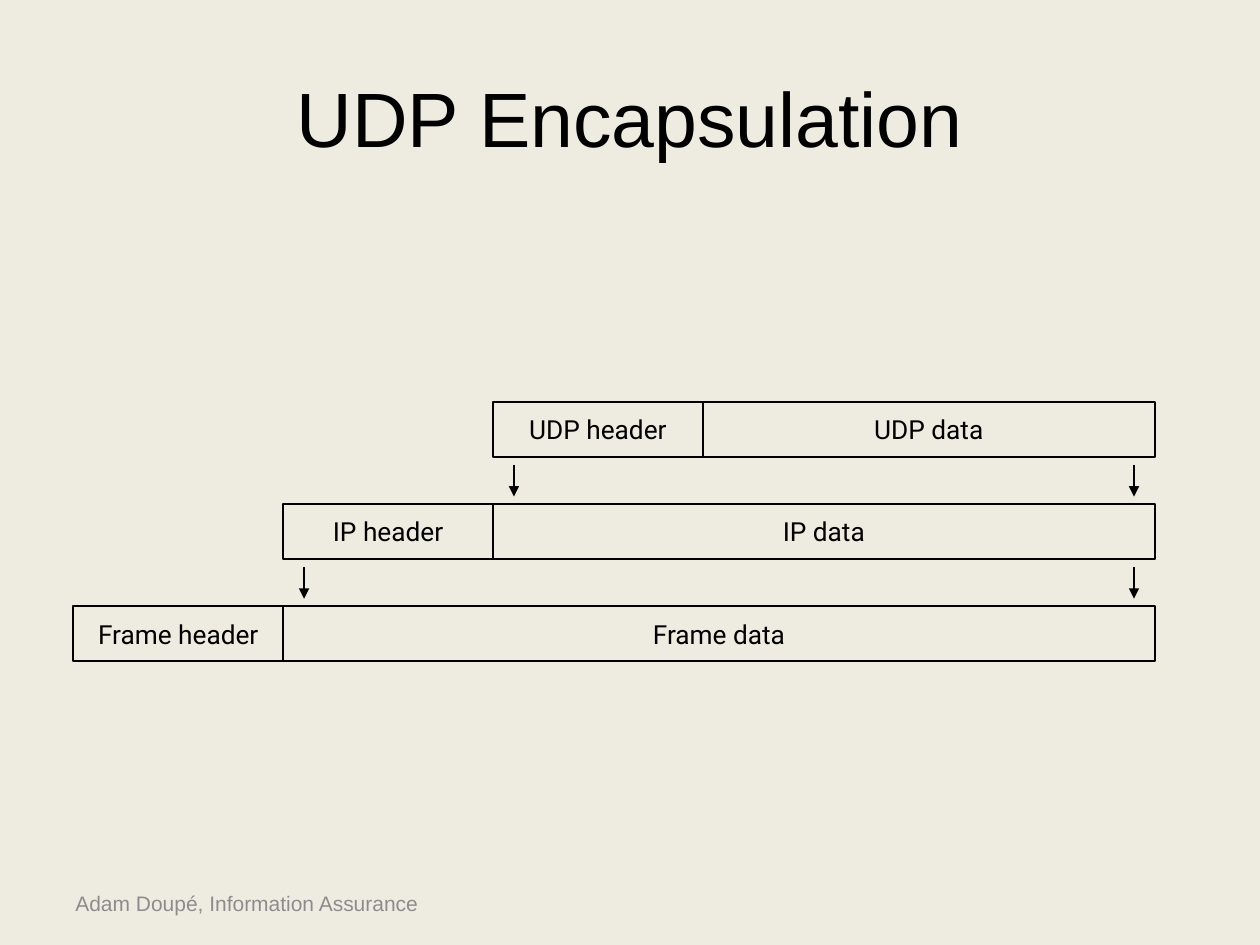
import pptx
import pptx.util
import pptx.dml.color
import pptx.enum.shapes
import pptx.enum.text
import pptx.oxml.ns
from lxml import etree

Cm = pptx.util.Cm
Pt = pptx.util.Pt
ALIGN = pptx.enum.text.PP_ALIGN

TITLE = "UDP Encapsulation"
FOOTER = "Adam Doupé, Information Assurance"
LAYERS = [  # innermost packet first
    ("UDP header", "UDP data"),
    ("IP header", "IP data"),
    ("Frame header", "Frame data"),
]
COLORS = {"background": "EEECE1", "ink": "000000", "footer": "8C8C8C"}

# Layout in centimetres
LEFT, RIGHT, TOP = 1.48, 23.28, 8.1
HEADER_WIDTH, ROW_HEIGHT, ROW_STEP = 4.23, 1.11, 2.06
ARROW_INSET, ARROW_GAP, ARROW_LENGTH = 0.42, 0.16, 0.64


def rgb(name):
    return pptx.dml.color.RGBColor.from_string(COLORS[name])


def write(shape, text, size, font, color, align):
    frame = shape.text_frame
    frame.vertical_anchor = pptx.enum.text.MSO_ANCHOR.MIDDLE
    para = frame.paragraphs[0]
    para.text = text
    para.alignment = align
    para.font.size = Pt(size)
    para.font.name = font
    para.font.color.rgb = rgb(color)


def add_text(page, text, left, top, width, height, size, color, align):
    box = page.shapes.add_textbox(Cm(left), Cm(top), Cm(width), Cm(height))
    box.text_frame.word_wrap = True
    write(box, text, size, "Arial", color, align)


def add_field(page, text, left, top, width):
    field = page.shapes.add_shape(
        pptx.enum.shapes.MSO_SHAPE.RECTANGLE,
        Cm(left), Cm(top), Cm(width), Cm(ROW_HEIGHT))
    field.shadow.inherit = False
    field.fill.background()
    field.line.color.rgb = rgb("ink")
    field.line.width = Pt(1)
    frame = field.text_frame
    frame.word_wrap = False
    frame.margin_left = frame.margin_right = Cm(0.23)
    frame.margin_top = frame.margin_bottom = Cm(0.1)
    write(field, text, 15, "Roboto", "ink", ALIGN.CENTER)


def add_down_arrow(page, x, top):
    arrow = page.shapes.add_connector(
        pptx.enum.shapes.MSO_CONNECTOR.STRAIGHT,
        Cm(x), Cm(top), Cm(x), Cm(top + ARROW_LENGTH))
    arrow.line.color.rgb = rgb("ink")
    arrow.line.width = Pt(1)
    qn = pptx.oxml.ns.qn
    etree.SubElement(arrow.line._get_or_add_ln(), qn("a:tailEnd"), type="triangle")
    etree.SubElement(arrow._element.spPr, qn("a:effectLst"))


def main():
    deck = pptx.Presentation()
    deck.slide_width, deck.slide_height = Cm(25.4), Cm(19.05)
    page = deck.slides.add_slide(deck.slide_layouts[6])
    page.background.fill.solid()
    page.background.fill.fore_color.rgb = rgb("background")

    add_text(page, FOOTER, 1.27, 17.7, 10.82, 1.02, 12, "footer", ALIGN.LEFT)
    add_text(page, TITLE, 1.27, 0.76, 22.86, 3.18, 44, "ink", ALIGN.CENTER)

    last = len(LAYERS) - 1
    for row, (header, data) in enumerate(LAYERS):
        left = LEFT + (last - row) * HEADER_WIDTH
        top = TOP + row * ROW_STEP
        split = left + HEADER_WIDTH
        add_field(page, header, left, top, HEADER_WIDTH)
        add_field(page, data, split, top, RIGHT - split)
        if row < last:
            for x in (left + ARROW_INSET, RIGHT - ARROW_INSET):
                add_down_arrow(page, x, top + ROW_HEIGHT + ARROW_GAP)

    deck.save("out.pptx")


if __name__ == "__main__":
    main()
